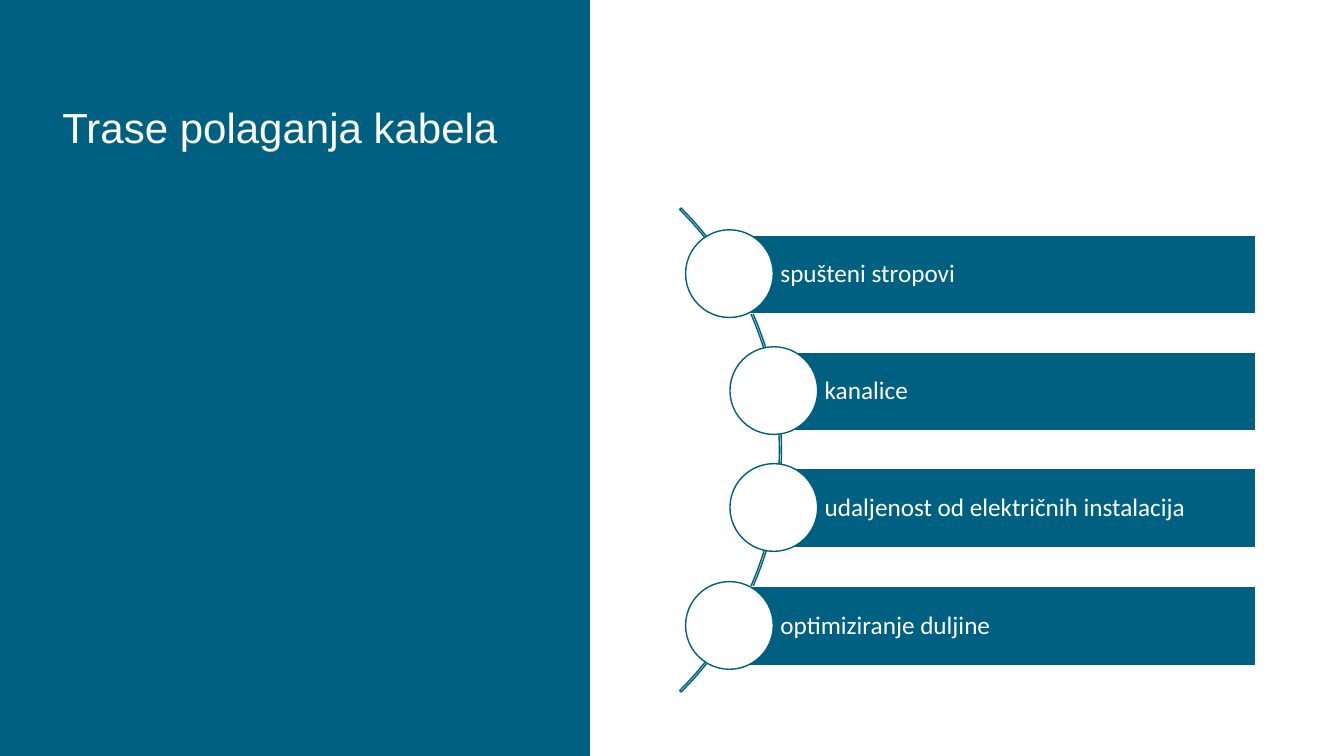
from pptx import Presentation
from pptx.dml.color import RGBColor
from pptx.enum.shapes import MSO_SHAPE as Shape
from pptx.enum.text import MSO_ANCHOR as Anchor, PP_ALIGN as Align
from pptx.util import Emu, Pt

PX = 9144  # 100 px to the inch
TEAL, WHITE = "006081", "FEFFFE"
ROUTES = [
    "spušteni stropovi",
    "kanalice",
    "udaljenost od električnih instalacija",
    "optimiziranje duljine",
]


def px(length):
    return Emu(length * PX)


def color(value):
    return RGBColor.from_string(value)


def add_shape(slide, kind, box, fill, line=None):
    shape = slide.shapes.add_shape(kind, *map(px, box))
    shape.shadow.inherit = False
    shape.fill.solid()
    shape.fill.fore_color.rgb = color(fill)
    if line:
        shape.line.color.rgb = color(line)
        shape.line.width = Pt(1)
    else:
        shape.line.fill.background()
    return shape


def write(shape, text, font, size, anchor, insets):
    frame = shape.text_frame
    frame.word_wrap = True
    frame.vertical_anchor = anchor
    (frame.margin_left, frame.margin_top,
     frame.margin_right, frame.margin_bottom) = map(px, insets)
    paragraph = frame.paragraphs[0]
    paragraph.alignment = Align.LEFT
    paragraph.line_spacing = 0.9
    run = paragraph.add_run()
    run.text = text
    run.font.name = font
    run.font.size = Pt(size)
    run.font.color.rgb = color(WHITE)


def add_title_panel(slide, box):
    left, top, width, height = box
    add_shape(slide, Shape.RECTANGLE, box, TEAL)
    title = slide.shapes.add_textbox(
        px(left + 52), px(top + 52), px(width - 107), px(104))
    write(title, "Trase polaganja kabela", "Arial", 30, Anchor.BOTTOM, (10, 5, 10, 5))


def add_route_list(slide, box):
    left, top, width, height = box
    middle = top + height // 2

    # Thin arc from 315 to 45 degrees behind the circles
    arc_size = 679
    arc = add_shape(slide, Shape.BLOCK_ARC,
                    (left - 584, middle - arc_size // 2, arc_size, arc_size), WHITE, TEAL)
    for index, value in enumerate((189, 27, 0.003)):
        arc.adjustments[index] = value

    # Bars with circles; the inner rows step right along the arc
    circle_size, bar_height, span = 87, 78, 349
    last = len(ROUTES) - 1
    for row, route in enumerate(ROUTES):
        center_x = left + (44 if row in (0, last) else 88)
        center_y = middle - span // 2 + row * span // last
        bar = add_shape(slide, Shape.RECTANGLE,
                        (center_x, center_y - bar_height // 2,
                         left + width - center_x, bar_height), TEAL, WHITE)
        write(bar, route, "Calibri", 18, Anchor.MIDDLE, (50, 4, 4, 4))
        add_shape(slide, Shape.OVAL,
                  (center_x - 44, center_y - 44, circle_size, circle_size), WHITE, TEAL)


def main():
    presentation = Presentation()
    presentation.slide_width, presentation.slide_height = px(1333), px(750)
    slide = presentation.slides.add_slide(presentation.slide_layouts[6])
    slide.background.fill.solid()
    slide.background.fill.fore_color.rgb = color(WHITE)
    add_title_panel(slide, (0, 0, 585, 750))
    add_route_list(slide, (680, 206, 565, 480))
    presentation.save("out.pptx")


if __name__ == "__main__":
    main()
